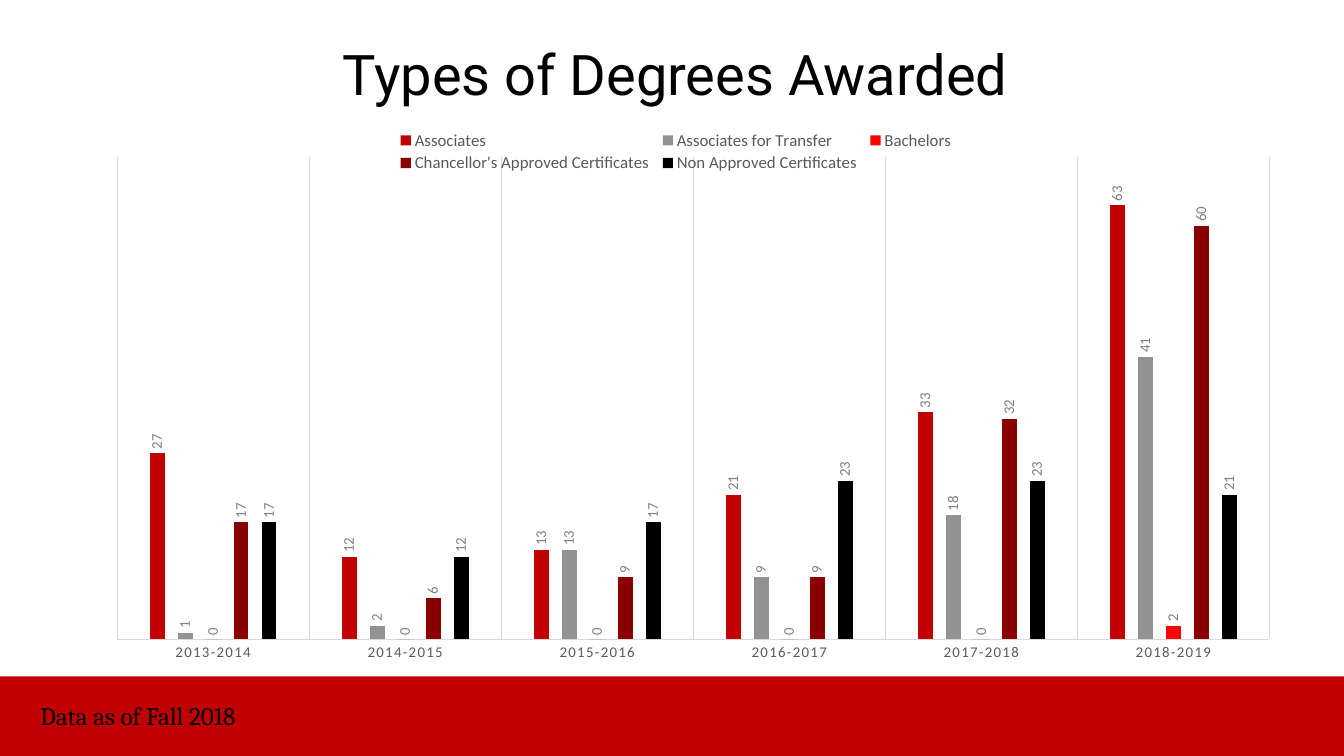
from dataclasses import dataclass

from lxml import etree
from pptx import Presentation
from pptx import util as u
from pptx.chart import data
from pptx.dml.color import RGBColor
from pptx.enum import chart as ch, shapes, text
from pptx.oxml import ns


@dataclass(frozen=True)
class Theme:
    """Colours, fonts and type sizes of the slide."""
    red: str = "C00000"
    ink: str = "000000"
    body: str = "595959"
    label: str = "808080"
    rule: str = "D9D9D9"
    head: str = "Roboto"
    note: str = "Cambria"
    plain: str = "Calibri"
    title: float = 40
    foot: float = 18
    key: float = 12
    tick: float = 10.6
    base: float = 10


T = Theme()
YEARS = [f"{y}-{y + 1}" for y in range(2013, 2019)]
AWARDS = [
    ("Associates", "C00000", (27, 12, 13, 21, 33, 63)),
    ("Associates for Transfer", "929292", (1, 2, 13, 9, 18, 41)),
    ("Bachelors", "FF0000", (0, 0, 0, 0, 0, 2)),
    ("Chancellor's Approved Certificates", "8A0000", (17, 6, 9, 9, 32, 60)),
    ("Non Approved Certificates", "000000", (17, 12, 17, 23, 23, 21)),
]


def style(font, name, size, color):
    """Set the face, size and colour of a font."""
    font.name, font.size = name, u.Pt(size)
    font.color.rgb = RGBColor.from_string(color)


def rule(line):
    """Draw a line as a thin grey rule."""
    line.color.rgb = RGBColor.from_string(T.rule)
    line.width = u.Pt(0.75)


def write(slide, box, words, name, size):
    """Add a one-line text box and return its frame."""
    frame = slide.shapes.add_textbox(*map(u.Inches, box)).text_frame
    frame.word_wrap = True
    run = frame.paragraphs[0].add_run()
    run.text = words
    style(run.font, name, size, T.ink)
    return frame


def title(slide, box):
    """Place the centred slide title."""
    frame = write(slide, box, "Types of Degrees Awarded", T.head, T.title)
    frame.vertical_anchor = text.MSO_ANCHOR.MIDDLE
    para = frame.paragraphs[0]
    para.alignment = text.PP_ALIGN.CENTER
    para.line_spacing = 0.9


def band(slide, box):
    """Place the red band at the foot."""
    bar = slide.shapes.add_shape(shapes.MSO_SHAPE.RECTANGLE, *map(u.Inches, box))
    bar.shadow.inherit = False
    bar.fill.solid()
    bar.fill.fore_color.rgb = RGBColor.from_string(T.red)
    bar.line.fill.background()


def note(slide, box):
    """Place the source note on the band at the given box."""
    frame = write(slide, box, "Data as of Fall 2018", T.note, T.foot)
    frame.auto_size = text.MSO_AUTO_SIZE.SHAPE_TO_FIT_TEXT


def layout(x, y, w, h, inner=False):
    """Build a manual chart layout from fractions of the chart."""
    root = etree.Element(ns.qn("c:layout"))
    man = etree.SubElement(root, ns.qn("c:manualLayout"))
    parts = [("layoutTarget", "inner")] if inner else []
    parts += [("xMode", "edge"), ("yMode", "edge")]
    parts += [("x", x), ("y", y), ("w", w), ("h", h)]
    for tag, val in parts:
        etree.SubElement(man, ns.qn("c:" + tag)).set("val", str(val))
    return root


def axes(chart):
    """Format the year axis and hide the value axis."""
    years, count = chart.category_axis, chart.value_axis
    years.major_tick_mark = years.minor_tick_mark = ch.XL_TICK_MARK.NONE
    years.has_major_gridlines = True
    rule(years.major_gridlines.format.line)
    rule(years.format.line)
    style(years.tick_labels.font, T.plain, T.tick, T.body)
    count.minimum_scale, count.maximum_scale = 0, 70
    count.has_major_gridlines = False
    count.visible = False


def bars(chart):
    """Format the columns and their value labels."""
    plot = chart.plots[0]
    plot.gap_width, plot.overlap = 444, -90
    plot.vary_by_categories = False
    for ser, (_, color, _) in zip(plot.series, AWARDS):
        ser.format.fill.solid()
        ser.format.fill.fore_color.rgb = RGBColor.from_string(color)
        tags = ser.data_labels
        tags.show_value = True
        tags.position = ch.XL_LABEL_POSITION.OUTSIDE_END
        style(tags.font, T.plain, T.tick, T.label)


def tune(chart):
    """Place plot and legend, turn the labels and space the years."""
    root = chart.element
    for old in root.xpath(".//c:plotArea/c:layout | .//c:legend/c:layout"):
        old.getparent().remove(old)
    area = root.xpath(".//c:plotArea")[0]
    area.insert(0, layout(0.046, 0.064, 0.936, 0.807, True))
    spot = root.xpath(".//c:legend/c:legendPos")[0]
    spot.addnext(layout(0.27, 0.015, 0.46, 0.08))
    for body in root.xpath(".//c:dLbls/c:txPr/a:bodyPr"):
        body.set("rot", "-5400000")
        body.set("vert", "horz")
    for run in root.xpath(".//c:catAx/c:txPr//a:defRPr"):
        run.set("spc", "100")


def graph(slide, box):
    """Place the clustered column chart of awards by year."""
    table = data.CategoryChartData()
    table.categories = YEARS
    for name, _, vals in AWARDS:
        table.add_series(name, vals)
    kind = ch.XL_CHART_TYPE.COLUMN_CLUSTERED
    chart = slide.shapes.add_chart(kind, *map(u.Inches, box), table).chart
    chart.has_title = False
    style(chart.font, T.plain, T.base, T.ink)
    chart.has_legend = True
    chart.legend.position = ch.XL_LEGEND_POSITION.TOP
    chart.legend.include_in_layout = False
    style(chart.legend.font, T.plain, T.key, T.body)
    axes(chart)
    bars(chart)
    tune(chart)


def main():
    """Build and save the slide."""
    deck = Presentation()
    deck.slide_width, deck.slide_height = u.Inches(13.33), u.Inches(7.5)
    slide = deck.slides.add_slide(deck.slide_layouts[6])
    title(slide, (0.6, 0.22, 12.19, 1.09))
    band(slide, (0, 6.71, 13.33, 0.79))
    graph(slide, (0.6, 1.18, 12.21, 5.93))
    note(slide, (0.3, 6.9, 6.69, 0.4))
    deck.save("out.pptx")


if __name__ == "__main__":
    main()
